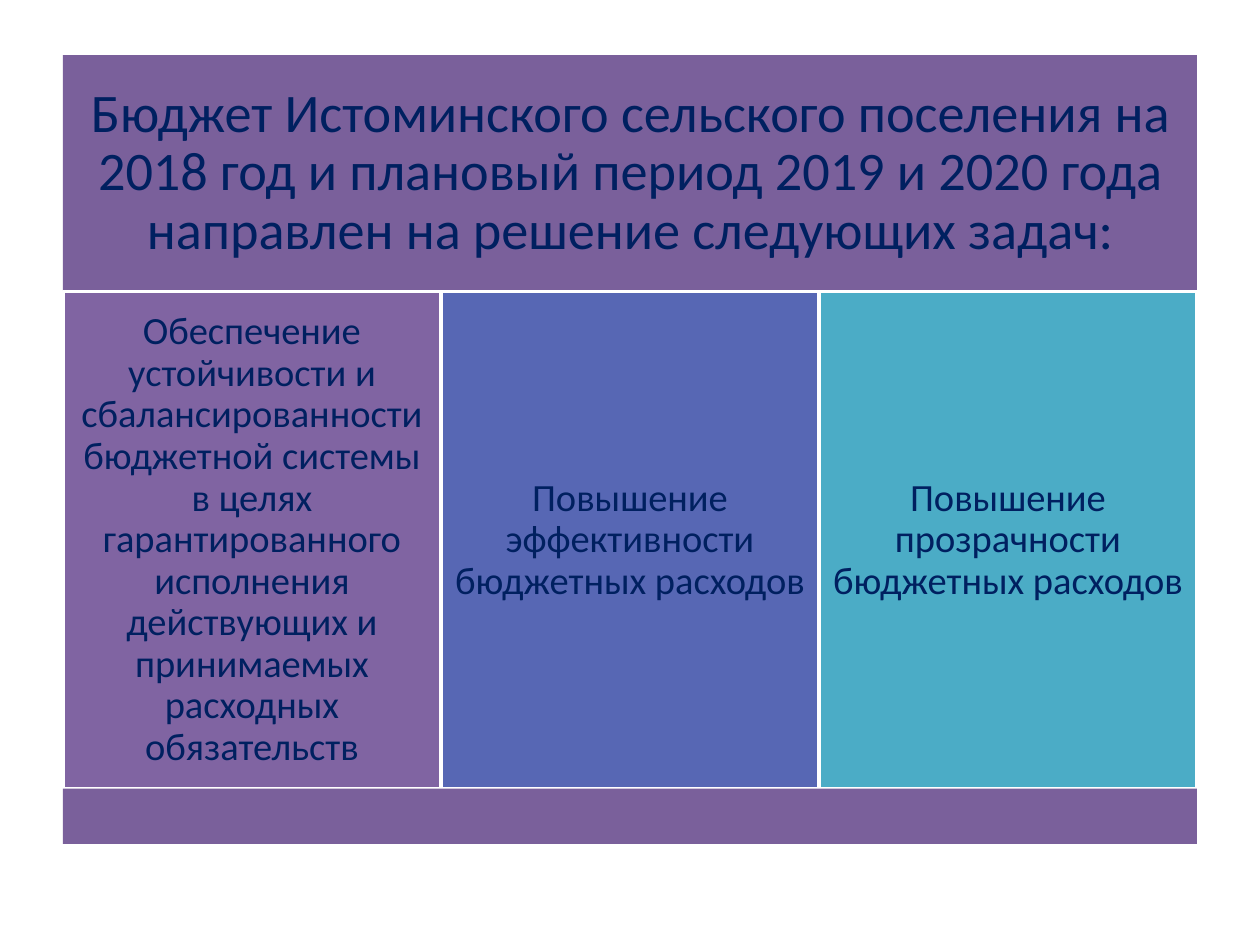
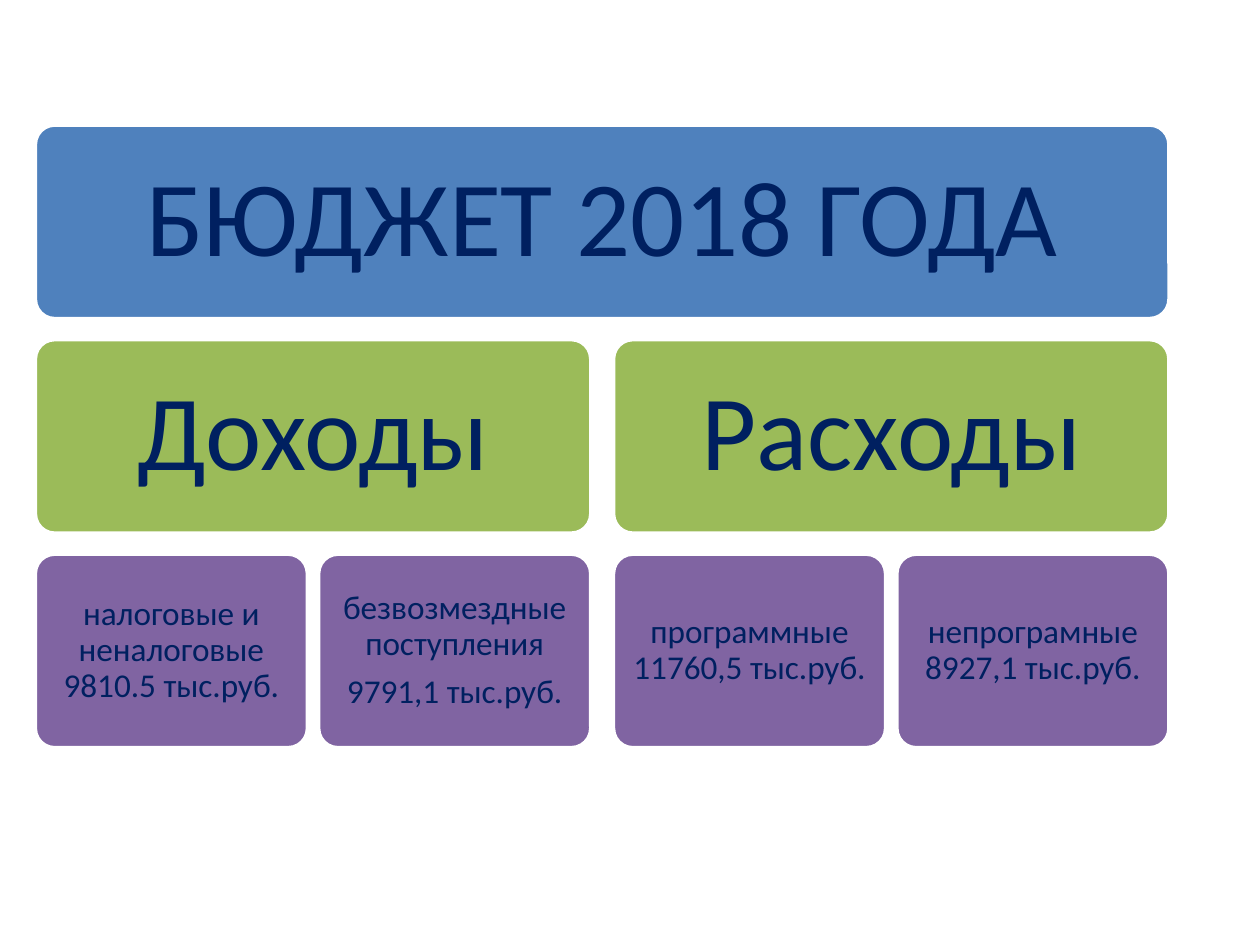
from pptx import Presentation
from pptx.dml.color import RGBColor
from pptx.enum import shapes, text
from pptx.util import Pt

NAVY = RGBColor(0x00, 0x20, 0x60)
WHITE = RGBColor(0xFF, 0xFF, 0xFF)
PLUM = RGBColor(0x7A, 0x60, 0x9B)
PURPLE = RGBColor(0x80, 0x64, 0xA2)
INDIGO = RGBColor(0x57, 0x67, 0xB4)
TEAL = RGBColor(0x4B, 0xAC, 0xC6)
BLUE = RGBColor(0x4F, 0x81, 0xBD)
GREEN = RGBColor(0x9B, 0xBB, 0x59)


class Deck:
    font = "Calibri"
    ink = NAVY
    edge = WHITE

    def __init__(self):
        self.prs = Presentation()
        self.prs.slide_width = Pt(720)
        self.prs.slide_height = Pt(540)

    def page(self):
        self.slide = self.prs.slides.add_slide(self.prs.slide_layouts[6])

    def shape(self, kind, x, y, w, h, fill, line):
        item = self.slide.shapes.add_shape(kind, Pt(x), Pt(y), Pt(w), Pt(h))
        item.shadow.inherit = False
        item.fill.solid()
        item.fill.fore_color.rgb = fill
        if line:
            item.line.color.rgb = self.edge
            item.line.width = Pt(2)
        else:
            item.line.fill.background()
        return item

    def label(self, item, lines, size, pad):
        frame = item.text_frame
        frame.word_wrap = True
        frame.vertical_anchor = text.MSO_ANCHOR.MIDDLE
        frame.margin_left = frame.margin_right = Pt(pad)
        frame.margin_top = frame.margin_bottom = Pt(pad)
        for i, line in enumerate(lines):
            para = frame.add_paragraph() if i else frame.paragraphs[0]
            para.alignment = text.PP_ALIGN.CENTER
            para.line_spacing = 0.9
            para.space_after = Pt(size * 0.35)
            run = para.add_run()
            run.text = line
            run.font.name = self.font
            run.font.size = Pt(size)
            run.font.color.rgb = self.ink

    def block(self, x, y, w, h, fill, lines=(), size=22, pad=6.6, line=True):
        item = self.shape(shapes.MSO_SHAPE.RECTANGLE, x, y, w, h, fill, line)
        self.label(item, lines, size, pad)

    def card(self, x, y, w, h, fill, lines, size, pad):
        item = self.shape(shapes.MSO_SHAPE.ROUNDED_RECTANGLE, x, y, w, h, fill, True)
        item.adjustments[0] = 0.1
        self.label(item, lines, size, pad)


def goals(deck):
    deck.page()
    left, top, width = 36, 31.5, 648
    head, body, foot = 135.2, 283.9, 31.6
    title = ("Бюджет Истоминского сельского поселения на 2018 год и плановый период "
             "2019 и 2020 года направлен на решение следующих задач:")
    tasks = [
        (PURPLE, "Обеспечение устойчивости и сбалансированности бюджетной системы "
                 "в целях гарантированного исполнения действующих и принимаемых "
                 "расходных обязательств"),
        (INDIGO, "Повышение эффективности бюджетных расходов"),
        (TEAL, "Повышение прозрачности бюджетных расходов"),
    ]
    deck.block(left, top, width, head, PLUM, [title], 31, 9.3, line=False)
    step = width / len(tasks)
    for i, (fill, task) in enumerate(tasks):
        deck.block(left + i * step, top + head, step, body, fill, [task])
    deck.block(left, top + head + body, width, foot, PLUM, line=False)


def budget(deck):
    deck.page()
    left, top, high = 20.2, 71.5, 110.6
    row, leaf, gap, split = 122.6, 155.5, 6.4, 13
    half = 2 * leaf + gap
    sides = [
        ("Доходы", [["налоговые и неналоговые 9810.5 тыс.руб."],
                    ["безвозмездные поступления", "9791,1 тыс.руб."]]),
        ("Расходы", [["программные 11760,5 тыс.руб."],
                     ["непрограмные 8927,1 тыс.руб."]]),
    ]
    deck.card(left, top, 2 * half + split, high, BLUE, ["БЮДЖЕТ 2018 ГОДА"], 61, 18)
    for i, (name, parts) in enumerate(sides):
        x = left + i * (half + split)
        deck.card(x, top + row, half, high, GREEN, [name], 61, 18)
        for j, lines in enumerate(parts):
            deck.card(x + j * (leaf + gap), top + 2 * row, leaf, high,
                      PURPLE, lines, 19, 5.7)


def main():
    deck = Deck()
    goals(deck)
    budget(deck)
    deck.prs.save("out.pptx")


if __name__ == "__main__":
    main()
